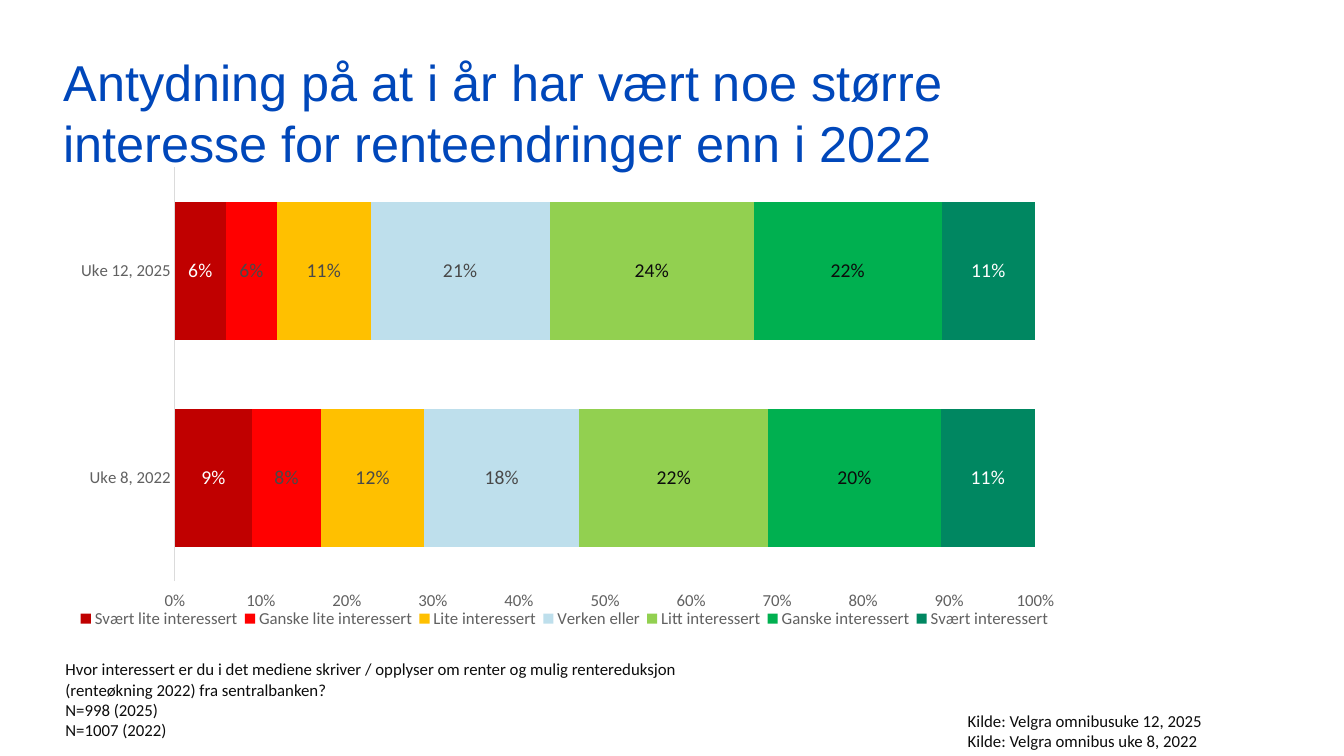
from lxml.etree import SubElement
from pptx import Presentation
from pptx.chart.data import CategoryChartData
from pptx.dml.color import RGBColor
from pptx.enum.chart import (
    XL_CHART_TYPE, XL_LABEL_POSITION, XL_LEGEND_POSITION, XL_TICK_LABEL_POSITION, XL_TICK_MARK)
from pptx.enum.text import MSO_ANCHOR
from pptx.oxml import parse_xml
from pptx.oxml.ns import nsdecls, qn
from pptx.util import Inches, Pt

COLORS = {
    "title": "0047BA", "ink": "0C0C0C", "axis": "616161", "axis_line": "DBDBDB",
    "label": "494949", "white": "FFFFFF", "dark_red": "C00000", "red": "FF0000",
    "amber": "FFC000", "pale_blue": "BEDFEC", "lime": "92D050", "green": "00B050",
    "teal": "008761",
}

WEEKS = ["Uke 12, 2025", "Uke 8, 2022"]
ANSWERS = [
    ("Svært lite interessert", (0.06, 0.09), "dark_red", "white"),
    ("Ganske lite interessert", (0.06, 0.08), "red", "label"),
    ("Lite interessert", (0.11, 0.12), "amber", "label"),
    ("Verken eller", (0.21, 0.18), "pale_blue", "label"),
    ("Litt interessert", (0.24, 0.22), "lime", "ink"),
    ("Ganske interessert", (0.22, 0.2), "green", "ink"),
    ("Svært interessert", (0.11, 0.11), "teal", "white"),
]


class SlideBuilder:
    """Holds the text style and the current slide, and adds its elements."""

    def __init__(self, slide, body_font="Calibri"):
        self.slide = slide
        self.body_font = body_font

    def style(self, font, size, color, name=None):
        font.name = name or self.body_font
        font.size = Pt(size)
        font.color.rgb = RGBColor.from_string(COLORS[color])

    def text(self, box, lines, size=12, color="ink", name=None, inset=None, anchor=MSO_ANCHOR.TOP):
        shape = self.slide.shapes.add_textbox(*map(Inches, box))
        frame = shape.text_frame
        frame.word_wrap = True
        frame.vertical_anchor = anchor
        if inset is not None:
            frame.margin_left = frame.margin_right = Inches(inset)
            frame.margin_top = frame.margin_bottom = Inches(inset)
        frame.text = "\n".join(lines)
        for paragraph in frame.paragraphs:
            self.style(paragraph.font, size, color, name)

    def place(self, parent, index, inner, **fractions):
        for old_layout in parent.findall(qn("c:layout")):
            parent.remove(old_layout)
        layout = parse_xml(f"<c:layout {nsdecls('c')}><c:manualLayout/></c:layout>")
        settings = {"layoutTarget": "inner"} if inner else {}
        settings.update(xMode="edge", yMode="edge", **fractions)
        for tag, value in settings.items():
            SubElement(layout[0], qn(f"c:{tag}")).set("val", str(value))
        parent.insert(index, layout)

    def axis(self, axis):
        axis.has_major_gridlines = False
        axis.major_tick_mark = axis.minor_tick_mark = XL_TICK_MARK.NONE
        self.style(axis.tick_labels.font, 12, "axis")

    def stacked_chart(self, box, categories, rows):
        data = CategoryChartData(number_format="0%")
        data.categories = categories
        for name, values, _, _ in rows:
            data.add_series(name, values)
        chart = self.slide.shapes.add_chart(
            XL_CHART_TYPE.BAR_STACKED_100, *map(Inches, box), data).chart
        chart.has_title = False
        self.style(chart.font, 10, "ink")

        plot = chart.plots[0]
        plot.gap_width, plot.overlap = 50, 100
        plot.vary_by_categories = False
        for series, (_, _, fill, label) in zip(plot.series, rows):
            series.format.fill.solid()
            series.format.fill.fore_color.rgb = RGBColor.from_string(COLORS[fill])
            labels = series.data_labels
            labels.show_value = True
            labels.number_format = "0%"
            labels.number_format_is_linked = False
            labels.position = XL_LABEL_POSITION.CENTER
            self.style(labels.font, 14, label)

        self.axis(chart.category_axis)
        chart.category_axis.reverse_order = True
        line = chart.category_axis.format.line
        line.color.rgb = RGBColor.from_string(COLORS["axis_line"])
        line.width = Pt(0.75)

        self.axis(chart.value_axis)
        chart.value_axis.tick_label_position = XL_TICK_LABEL_POSITION.HIGH
        chart.value_axis.minimum_scale, chart.value_axis.maximum_scale = 0, 1
        chart.value_axis.major_unit = 0.1
        chart.value_axis.tick_labels.number_format = "0%"
        chart.value_axis.tick_labels.number_format_is_linked = False
        chart.value_axis.format.line.fill.background()

        chart.has_legend = True
        chart.legend.position = XL_LEGEND_POSITION.BOTTOM
        chart.legend.include_in_layout = False
        self.style(chart.legend.font, 12, "axis")
        plot_area = chart.element.find(".//" + qn("c:plotArea"))
        legend = chart.element.find(".//" + qn("c:legend"))
        self.place(plot_area, 0, True, x=0.11, y=0.02, w=0.85, h=0.83)
        self.place(legend, 1, False, x=0.01, y=0.9, w=0.97, h=0.05)


def main():
    presentation = Presentation()
    presentation.slide_width, presentation.slide_height = Inches(13.33), Inches(7.5)
    builder = SlideBuilder(presentation.slides.add_slide(presentation.slide_layouts[6]))
    builder.text(
        (0.63, 0.5, 10.04, 1.21),
        ["Antydning på at i år har vært noe større interesse for renteendringer enn i 2022"],
        size=36, color="title", name="Arial", inset=0, anchor=MSO_ANCHOR.BOTTOM)
    builder.stacked_chart((0.63, 1.56, 10.04, 4.95), WEEKS, ANSWERS)
    builder.text((0.55, 6.49, 6.79, 0.91), [
        "Hvor interessert er du i det mediene skriver / opplyser om renter og mulig "
        "rentereduksjon (renteøkning 2022) fra sentralbanken?",
        "N=998 (2025)",
        "N=1007 (2022)",
    ])
    builder.text((9.5, 7, 2.96, 0.5), [
        "Kilde: Velgra omnibusuke 12, 2025",
        "Kilde: Velgra omnibus uke 8, 2022",
    ])
    presentation.save("out.pptx")


if __name__ == "__main__":
    main()
